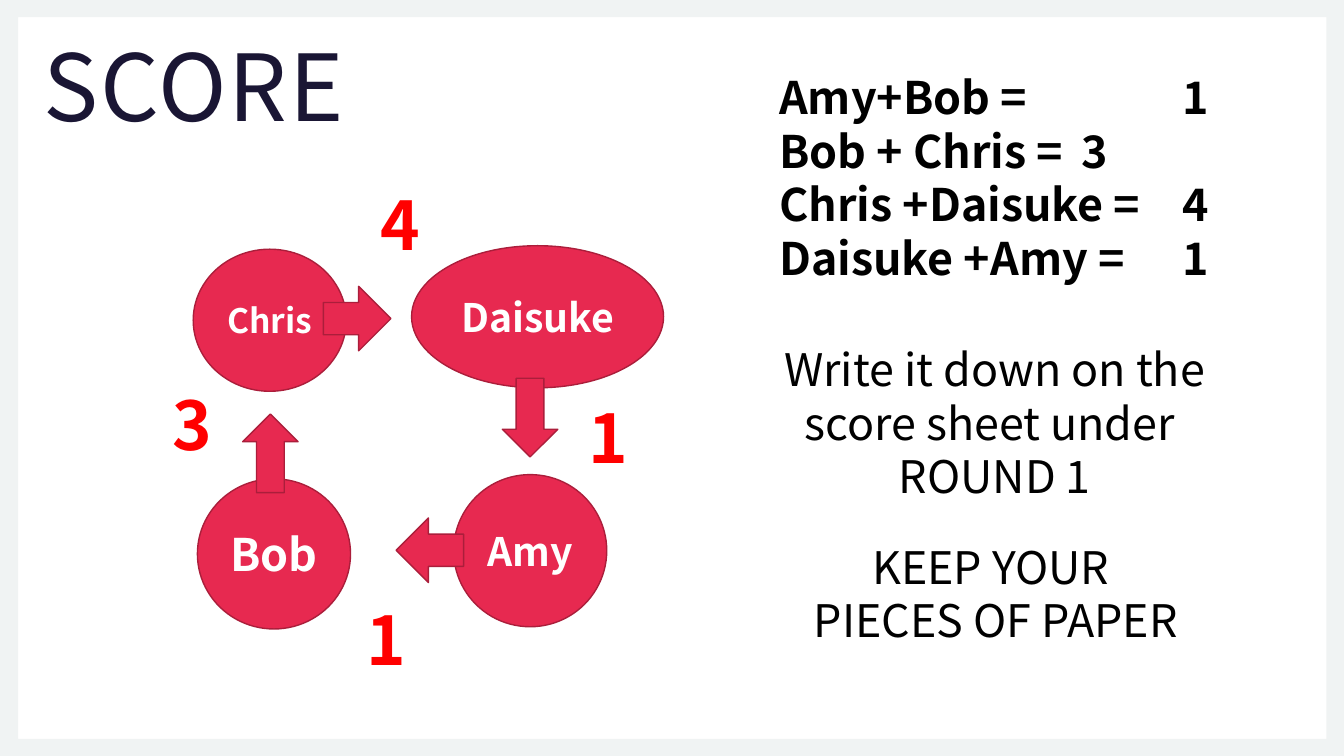
from lxml import etree
from pptx import Presentation
from pptx.dml.color import RGBColor
from pptx.enum.shapes import MSO_SHAPE
from pptx.enum.text import MSO_ANCHOR, MSO_AUTO_SIZE, PP_ALIGN
from pptx.oxml.ns import qn
from pptx.util import Pt

OVAL = MSO_SHAPE.OVAL
LEFT_ARROW = MSO_SHAPE.LEFT_ARROW
LEFT, CENTER = PP_ALIGN.LEFT, PP_ALIGN.CENTER
MIDDLE, BOTTOM = MSO_ANCHOR.MIDDLE, MSO_ANCHOR.BOTTOM
NO_FIT = MSO_AUTO_SIZE.NONE
GROW = MSO_AUTO_SIZE.SHAPE_TO_FIT_TEXT

FONT = "Noto Sans CJK JP"
PALE = RGBColor(0xF0, 0xF3, 0xF3)
NAVY = RGBColor(0x1A, 0x16, 0x34)
CRIMSON = RGBColor(0xE7, 0x29, 0x50)
DARK_CRIMSON = RGBColor(0xAB, 0x1E, 0x3B)
RED = RGBColor(0xFF, 0x00, 0x00)
BLACK = RGBColor(0x00, 0x00, 0x00)
WHITE = RGBColor(0xFF, 0xFF, 0xFF)

SLIDE_WIDTH, SLIDE_HEIGHT = 960, 540

PLAYERS = [
    ("Bob", 32, (25, 215, 109.4, 107.3)),
    ("Amy", 28, (208, 212, 109.4, 108.7)),
    ("Daisuke", 28, (178, 48.5, 180, 101.5)),
    ("Chris", 24, (22, 51, 109.4, 101.5)),
]
ARROWS = [
    (0, (167, 243, 48.2, 46.1)),
    (90, (49, 177, 56.2, 39.6)),
    (180, (115, 77.5, 48.2, 46.1)),
    (270, (234.5, 151.5, 56.2, 39.6)),
]
SCORES = [
    ("1", 139, 297),
    ("3", 0, 143),
    ("4", 149, 0.5),
    ("1", 297, 152.5),
]
RESULTS = [
    "Amy+Bob = \t\t1",
    "Bob + Chris = \t3",
    "Chris +Daisuke = \t4",
    "Daisuke +Amy = \t1",
]
INSTRUCTION = ["Write it down on the", "score sheet under ", "ROUND 1"]
REMINDER = ["KEEP YOUR ", "PIECES OF PAPER"]
RESULT_TABS = (216, 288)


def write_line(paragraph, words, size, color, bold=False, align=LEFT):
    paragraph.alignment = align
    run = paragraph.add_run()
    run.text = words
    run.font.name = FONT
    run.font.size = Pt(size)
    run.font.bold = bold
    run.font.color.rgb = color
    return run


def add_text(slide, box, lines, size, color, bold=False, align=LEFT,
             wrap=False, tabs=()):
    frame = slide.shapes.add_textbox(*map(Pt, box)).text_frame
    frame.word_wrap = wrap
    frame.auto_size = GROW
    for index, words in enumerate(lines):
        paragraph = frame.add_paragraph() if index else frame.paragraphs[0]
        write_line(paragraph, words, size, color, bold, align)
        if tabs:
            tab_list = etree.SubElement(
                paragraph._p.get_or_add_pPr(), qn("a:tabLst"))
            for stop in tabs:
                etree.SubElement(tab_list, qn("a:tab"),
                                 pos=str(Pt(stop)), algn="l")


def add_crimson_shape(slide, kind, box):
    shape = slide.shapes.add_shape(kind, *map(Pt, box))
    shape.shadow.inherit = False
    shape.fill.solid()
    shape.fill.fore_color.rgb = CRIMSON
    shape.line.color.rgb = DARK_CRIMSON
    shape.line.width = Pt(1)
    return shape


def add_border(slide, box):
    left, top, width, height = box
    right, bottom = left + width, top + height
    builder = slide.shapes.build_freeform(Pt(left), Pt(top))
    builder.add_line_segments(
        [(Pt(x), Pt(y)) for x, y in
         ((right, top), (right, bottom), (left, bottom))])
    inner_left, inner_top = left + 13, top + 12.2
    inner_right, inner_bottom = right - 12.5, bottom - 12.2
    builder.move_to(Pt(inner_left), Pt(inner_top))
    builder.add_line_segments(
        [(Pt(x), Pt(y)) for x, y in
         ((inner_left, inner_bottom), (inner_right, inner_bottom),
          (inner_right, inner_top))])
    border = builder.convert_to_shape()
    border.shadow.inherit = False
    border.fill.solid()
    border.fill.fore_color.rgb = PALE
    border.line.fill.background()
    return border


def add_title(slide, box, border):
    title = slide.shapes.title
    border._element.addnext(title._element)
    title.left, title.top, title.width, title.height = map(Pt, box)
    frame = title.text_frame
    frame.auto_size = NO_FIT
    frame.vertical_anchor = BOTTOM
    frame.margin_left = frame.margin_right = frame.margin_top = Pt(8.64)
    frame.margin_bottom = Pt(7.2)
    paragraph = frame.paragraphs[0]
    paragraph.line_spacing = 1.13
    run = write_line(paragraph, "SCORE", 66, NAVY)
    run.font._element.set("spc", "140")


def add_circle_of_players(slide, left, top):
    def place(box):
        x, y, width, height = box
        return left + x, top + y, width, height

    for name, size, box in PLAYERS:
        frame = add_crimson_shape(slide, OVAL, place(box)).text_frame
        frame.vertical_anchor = MIDDLE
        frame.word_wrap = True
        write_line(frame.paragraphs[0], name, size, WHITE, True, CENTER)
    for rotation, box in ARROWS:
        add_crimson_shape(slide, LEFT_ARROW, place(box)).rotation = rotation
    for score, x, y in SCORES:
        add_text(slide, place((x, y, 50.4, 65.5)), [score], 48, RED,
                 bold=True, wrap=True)


def add_score_notes(slide, left, top):
    add_text(slide, (left, top, 323.3, 162.7), RESULTS, 32, BLACK,
             bold=True, tabs=RESULT_TABS)
    add_text(slide, (left + 2.8, top + 194.4, 316.8, 123.8), INSTRUCTION,
             32, BLACK, align=CENTER)
    add_text(slide, (left + 14.4, top + 335.5, 295.2, 85), REMINDER,
             32, BLACK, align=CENTER)


def main():
    deck = Presentation()
    deck.slide_width, deck.slide_height = Pt(SLIDE_WIDTH), Pt(SLIDE_HEIGHT)
    slide = deck.slides.add_slide(deck.slide_layouts[5])
    slide.background.fill.solid()
    slide.background.fill.fore_color.rgb = WHITE
    border = add_border(slide, (0, 0, SLIDE_WIDTH, SLIDE_HEIGHT))
    add_title(slide, (22.3, 5.8, 308.2, 101.5), border)
    add_circle_of_players(slide, 116, 127)
    add_score_notes(slide, 549.4, 46.1)
    deck.save("out.pptx")


if __name__ == "__main__":
    main()
